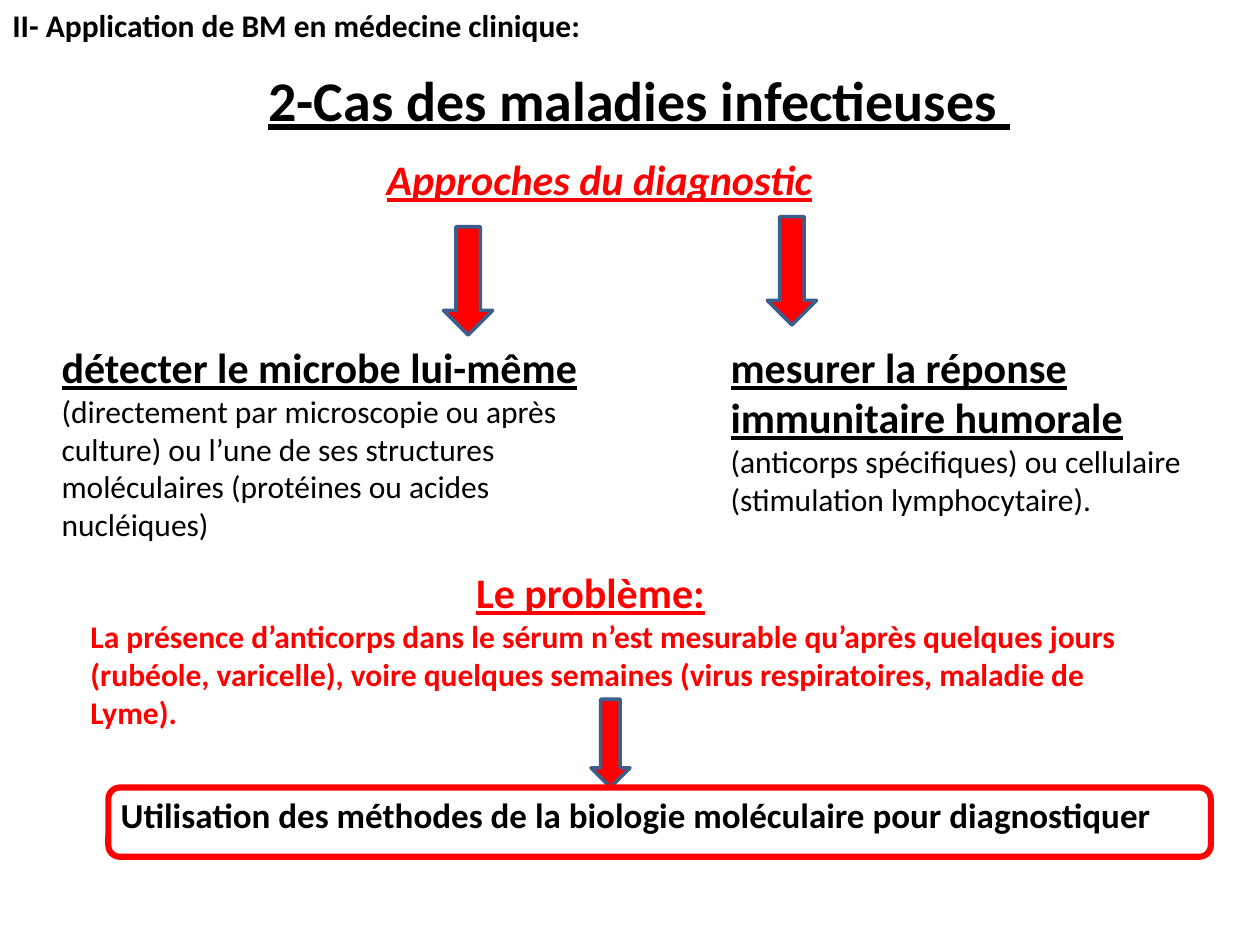
import pptx
import pptx.util
import pptx.dml.color
import pptx.enum.shapes
import pptx.enum.text

Pt = pptx.util.Pt
RGB = pptx.dml.color.RGBColor.from_string
MSO = pptx.enum.shapes.MSO_SHAPE
THEME = {
    "font": "Calibri", "ink": "000000", "red": "FF0000", "edge": "3A5F8C",
    "title": 32, "heading": 24, "strong": 20, "body": 18,
}

prs = pptx.Presentation()
prs.slide_width = pptx.util.Inches(10)
prs.slide_height = pptx.util.Inches(7.5)
COL, ROW = prs.slide_width / 100, prs.slide_height / 75
s = prs.slides.add_slide(prs.slide_layouts[5])


def grid(x, y, w, h):
    return [round(v) for v in (x * COL, y * ROW, w * COL, h * ROW)]


def write(sp, paragraphs):
    tf = sp.text_frame
    tf.word_wrap = True
    tf.auto_size = pptx.enum.text.MSO_AUTO_SIZE.NONE
    tf.vertical_anchor = pptx.enum.text.MSO_ANCHOR.TOP
    for i, runs in enumerate(paragraphs):
        p = tf.add_paragraph() if i else tf.paragraphs[0]
        p.alignment = pptx.enum.text.PP_ALIGN.LEFT
        for text, size, color, style in runs:
            r = p.add_run()
            r.text = text
            r.font.name = THEME["font"]
            r.font.size = Pt(THEME[size])
            r.font.color.rgb = RGB(THEME[color])
            r.font.bold = "b" in style
            r.font.italic = "i" in style
            r.font.underline = "u" in style


title = s.shapes.title
title.left, title.top, title.width, title.height = grid(20.3, 4.7, 63.3, 9.4)
write(title, [[("2-Cas des maladies infectieuses ", "title", "ink", "bu")]])

texts = [
    ((0, 0, 50, 4), [[("II- Application de BM en médecine clinique:", "body", "ink", "b")]]),
    ((29.7, 11.7, 53.1, 5), [[("Approches du diagnostic", "heading", "red", "biu")]]),
    ((3.9, 26.6, 43.8, 17.2), [[
        ("détecter le microbe lui-même", "heading", "ink", "bu"),
        (" ", "heading", "ink", "u"),
        ("(directement par microscopie ou après culture) ou l’une de ses structures "
         "moléculaires (protéines ou acides nucléiques)", "body", "ink", "")]]),
    ((57, 26.6, 40.6, 15.1), [[
        ("mesurer la réponse immunitaire humorale ", "heading", "ink", "bu"),
        ("(anticorps spécifiques) ou cellulaire (stimulation lymphocytaire).", "body", "ink", "")]]),
    ((6.2, 44.5, 88.3, 14.1), [
        [("Le problème:", "heading", "red", "bu")],
        [("La présence d’anticorps dans le sérum n’est mesurable qu’après quelques jours "
          "(rubéole, varicelle), voire quelques semaines (virus respiratoires, maladie de Lyme).",
          "body", "red", "b")]]),
    ((8.6, 62.5, 87.5, 4.4), [[
        ("Utilisation des méthodes de la biologie moléculaire pour diagnostiquer",
         "strong", "ink", "b")]]),
]
for place, paragraphs in texts:
    sp = s.shapes.add_textbox(*grid(*place))
    write(sp, paragraphs)
    if len(paragraphs) > 1:
        pPr = sp.text_frame.paragraphs[0]._p.get_or_add_pPr()
        pPr.set("marL", str(round(30.6 * COL)))
        pPr.set("indent", "0")

shapes = [
    (MSO.DOWN_ARROW, (46.9, 55.5, 3.1, 7), "edge", 2),
    (MSO.DOWN_ARROW, (35.2, 18, 3.9, 8.6), "edge", 2),
    (MSO.DOWN_ARROW, (60.9, 17.2, 3.9, 8.6), "edge", 2),
    (MSO.ROUNDED_RECTANGLE, (8.6, 62.5, 87.5, 5.5), "red", 3.5),
]
for kind, place, line, weight in shapes:
    sp = s.shapes.add_shape(kind, *grid(*place))
    sp.shadow.inherit = False
    sp.line.color.rgb = RGB(THEME[line])
    sp.line.width = Pt(weight)
    if kind == MSO.DOWN_ARROW:
        sp.fill.solid()
        sp.fill.fore_color.rgb = RGB(THEME["red"])
    else:
        sp.fill.background()

prs.save("out.pptx")
